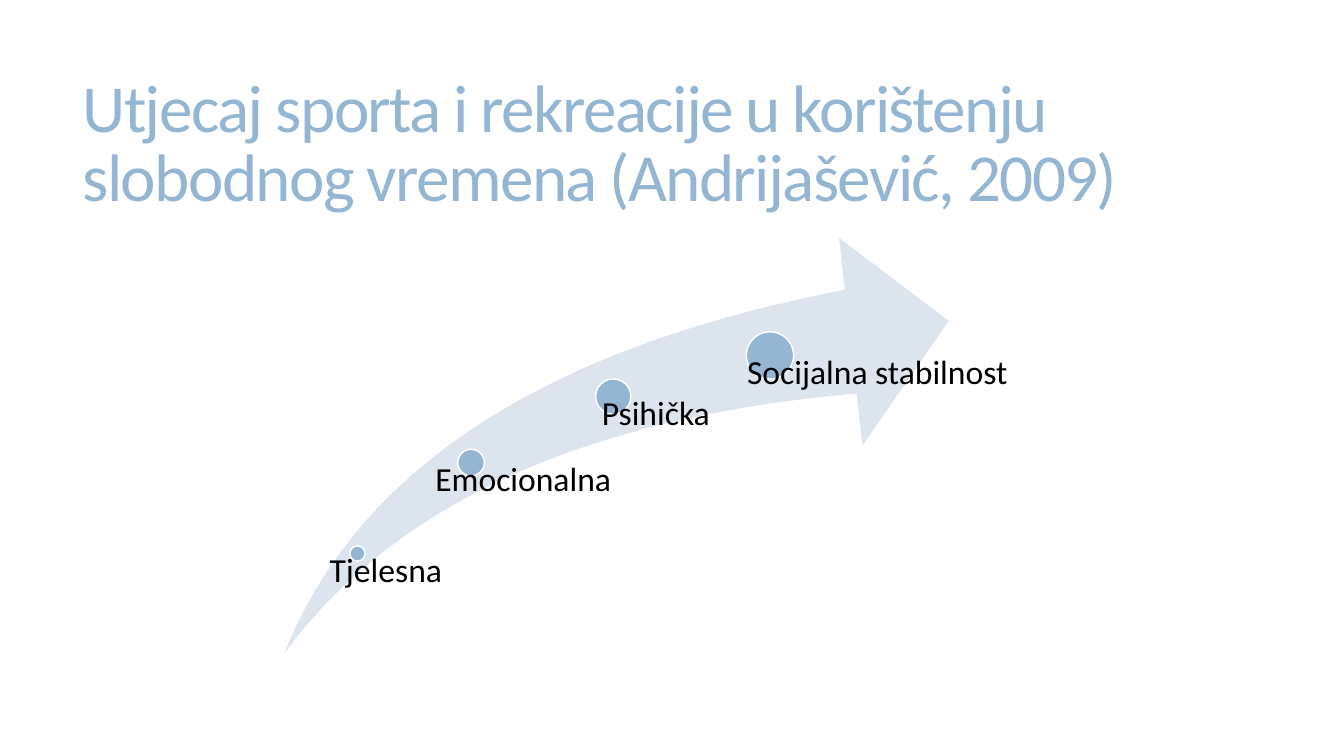
import pptx
import pptx.util
import pptx.dml.color
import pptx.enum.shapes
import pptx.enum.text

COLORS = {"accent": "94B6D2", "arrow": "DCE5EE", "text": "000000", "outline": "FFFFFF"}
FONT = "Calibri"
SHAPE = pptx.enum.shapes.MSO_SHAPE
ANCHOR = pptx.enum.text.MSO_ANCHOR
ALIGN = pptx.enum.text.PP_ALIGN
Inches = pptx.util.Inches

# dot centre x, y and diameter, label left and width: shares of the arrow box
STAGES = [
    ("Tjelesna", 0.11, 0.76, 0.023, 0.056, 0.28, 0.08),
    ("Emocionalna", 0.281, 0.541, 0.04, 0.206, 0.36, 0.14),
    ("Psihička", 0.495, 0.382, 0.053, 0.449, 0.30, 0.19),
    ("Socijalna stabilnost", 0.731, 0.283, 0.071, 0.578, 0.53, 0.78),
]


def rgb(name):
    return pptx.dml.color.RGBColor.from_string(COLORS[name])


def add_run(p, text, size, color):
    r = p.add_run()
    r.text = text
    r.font.name = FONT
    r.font.size = pptx.util.Pt(size)
    r.font.color.rgb = rgb(color)
    return r


def add_filled(s, kind, box, fill):
    sp = s.shapes.add_shape(kind, *map(Inches, box))
    sp.shadow.inherit = False
    sp.fill.solid()
    sp.fill.fore_color.rgb = rgb(fill)
    sp.line.fill.background()
    return sp


def add_title(s, box):
    sp = s.shapes.title
    sp.left, sp.top, sp.width, sp.height = map(Inches, box)
    tf = sp.text_frame
    tf.word_wrap = True
    tf.auto_size = pptx.enum.text.MSO_AUTO_SIZE.NONE
    tf.vertical_anchor = ANCHOR.MIDDLE
    p = tf.paragraphs[0]
    p.alignment = ALIGN.LEFT
    p.line_spacing = 0.85
    r = add_run(p, "Utjecaj sporta i rekreacije u korištenju slobodnog vremena (Andrijašević, 2009)",
                48, "accent")
    r.font._element.set("spc", "-120")


def add_label(s, text, box, inset):
    tf = s.shapes.add_textbox(*map(Inches, box)).text_frame
    tf.word_wrap = True
    tf.vertical_anchor = ANCHOR.TOP
    tf.margin_left = Inches(inset)
    tf.margin_top = tf.margin_right = tf.margin_bottom = 0
    p = tf.paragraphs[0]
    p.alignment = ALIGN.LEFT
    p.line_spacing = 0.9
    add_run(p, text, 24, "text")


def add_growth_arrow(s, box):
    left, top, width, height = box
    arrow = add_filled(s, SHAPE.SWOOSH_ARROW, box, "arrow")
    arrow.adjustments[0] = arrow.adjustments[1] = 0.25
    for text, cx, cy, size, label_x, label_w, inset in STAGES:
        x, y, d = left + cx * width, top + cy * height, size * width
        dot = add_filled(s, SHAPE.OVAL, (x - d / 2, y - d / 2, d, d), "accent")
        dot.line.color.rgb = rgb("outline")
        dot.line.width = pptx.util.Pt(1)
        label_box = (left + label_x * width, y, label_w * width, top + height - y)
        add_label(s, text, label_box, inset)


def main():
    prs = pptx.Presentation()
    prs.slide_width, prs.slide_height = Inches(13.33), Inches(7.5)
    s = prs.slides.add_slide(prs.slide_layouts[5])
    add_title(s, (0.72, 0.55, 11.78, 1.81))
    add_growth_arrow(s, (2.82, 2.36, 6.59, 4.12))
    prs.save("out.pptx")


if __name__ == "__main__":
    main()
